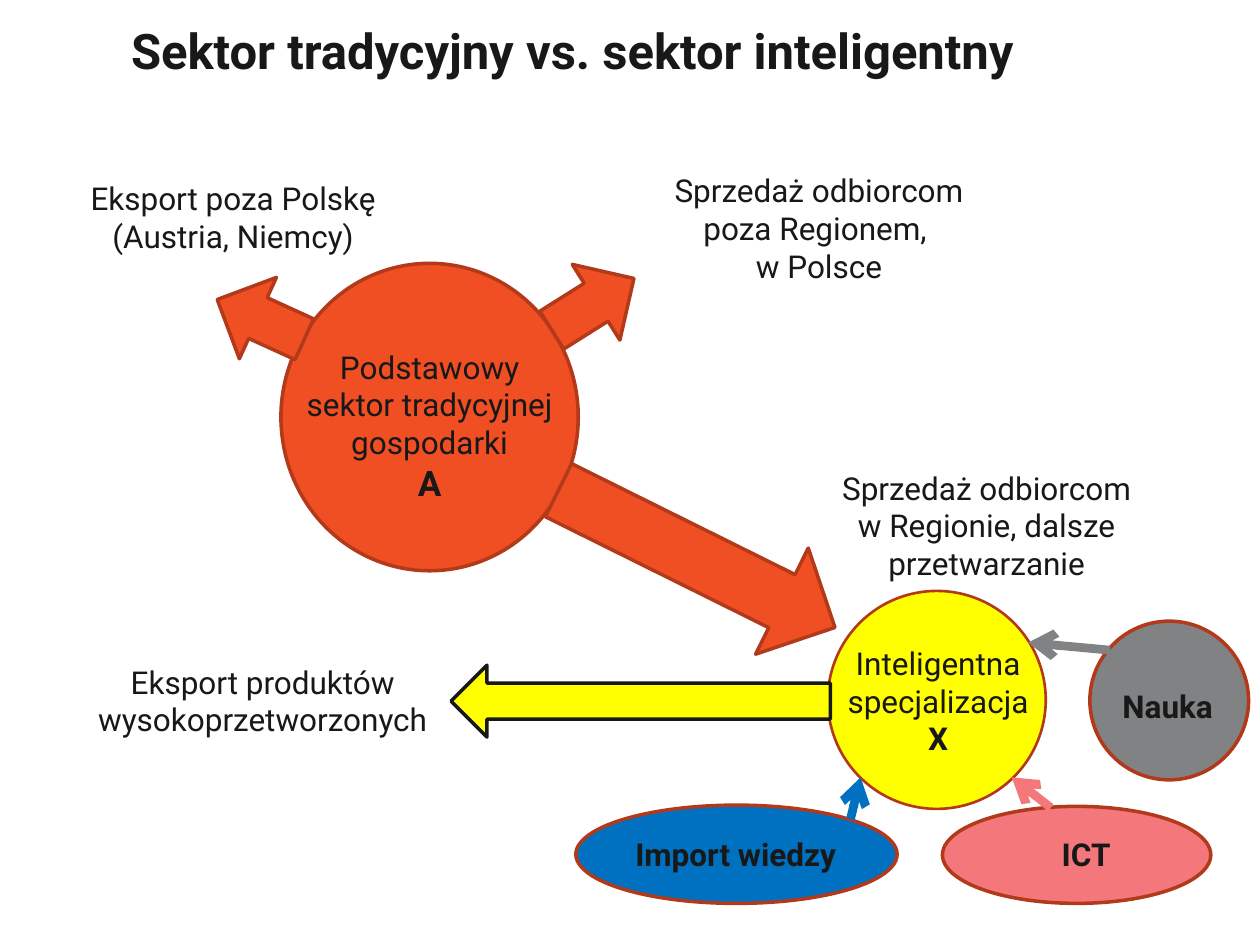
from pptx import Presentation
from pptx.dml.color import RGBColor
from pptx.enum.shapes import MSO_CONNECTOR, MSO_SHAPE
from pptx.enum.text import MSO_ANCHOR, MSO_AUTO_SIZE, PP_ALIGN
from pptx.oxml.ns import qn
from pptx.util import Inches, Pt
from lxml import etree

OVAL = MSO_SHAPE.OVAL
LEFT_ARROW, DOWN_ARROW = MSO_SHAPE.LEFT_ARROW, MSO_SHAPE.DOWN_ARROW
STRAIGHT = MSO_CONNECTOR.STRAIGHT
LEFT, CENTER = PP_ALIGN.LEFT, PP_ALIGN.CENTER
TOP = MSO_ANCHOR.TOP
GROW = MSO_AUTO_SIZE.SHAPE_TO_FIT_TEXT

FONT = "Roboto"
INK = RGBColor(0x18, 0x18, 0x18)
ORANGE = RGBColor(0xF0, 0x4E, 0x23)
RUST = RGBColor(0xB2, 0x3A, 0x1A)
YELLOW = RGBColor(0xFF, 0xFF, 0x00)
GRAY = RGBColor(0x80, 0x82, 0x84)
PINK = RGBColor(0xF4, 0x77, 0x7C)
BLUE = RGBColor(0x00, 0x70, 0xC0)


def add_run(paragraph, text, size=18, bold=False):
    run = paragraph.add_run()
    run.text = text
    run.font.name = FONT
    run.font.size = Pt(size)
    run.font.bold = bold
    run.font.color.rgb = INK


def add_label(shapes, box, *lines, bold=False, align=CENTER):
    """Add one paragraph per line; a (text, size) pair is a bold marker letter."""
    label = shapes.add_textbox(*map(Inches, box))
    frame = label.text_frame
    frame.word_wrap = True
    frame.auto_size = GROW
    for index, line in enumerate(lines):
        paragraph = frame.add_paragraph() if index else frame.paragraphs[0]
        paragraph.alignment = align
        if isinstance(line, tuple):
            add_run(paragraph, *line, bold=True)
        else:
            add_run(paragraph, line, bold=bold)
    return label


def add_figure(shapes, kind, box, fill, line=RUST, width=2, rotation=0):
    figure = shapes.add_shape(kind, *map(Inches, box))
    figure.shadow.inherit = False
    figure.fill.solid()
    figure.fill.fore_color.rgb = fill
    figure.line.color.rgb = line
    figure.line.width = Pt(width)
    figure.rotation = rotation


def add_inflow(shapes, start, end, color):
    arrow = shapes.add_connector(STRAIGHT, *map(Inches, start + end))
    arrow.line.color.rgb = color
    arrow.line.width = Pt(5)
    etree.SubElement(arrow.line._get_or_add_ln(), qn("a:tailEnd"), type="arrow")
    etree.SubElement(arrow._element.spPr, qn("a:effectLst"))


def fill_title(slide, box):
    title = slide.shapes.title
    title.left, title.top, title.width, title.height = map(Inches, box)
    frame = title.text_frame
    frame.vertical_anchor = TOP
    paragraph = frame.paragraphs[0]
    paragraph.alignment = LEFT
    add_run(paragraph, "Sektor tradycyjny vs. sektor inteligentny", 28, True)


def add_traditional_sector(slide, x, y):
    """Place circle A with its three outgoing arrows; x, y is the circle's corner."""
    shapes = slide.shapes.add_group_shape().shapes
    add_figure(shapes, OVAL, (x, y, 2.36, 2.44), ORANGE)
    add_label(shapes, (x, y + 0.62, 2.36, 1.35),
              "Podstawowy sektor tradycyjnej gospodarki", ("A", 20))
    for kind, dx, dy, width, height, rotation in (
            (LEFT_ARROW, -0.54, 0.09, 0.76, 0.71, 24.5),
            (LEFT_ARROW, 2.09, -0.03, 0.77, 0.71, 147.8),
            (DOWN_ARROW, 2.83, 1.12, 0.94, 2.45, 296.4)):
        add_figure(shapes, kind, (x + dx, y + dy, width, height), ORANGE,
                   rotation=rotation)


def add_sales_labels(slide, x, y):
    """Place the three market labels around the traditional sector."""
    width = 2.52
    add_label(slide.shapes, (x + 5.98, y + 2.36, width, 1.01),
              "Sprzedaż odbiorcom w Regionie, dalsze przetwarzanie")
    domestic = add_label(slide.shapes, (x + 4.65, y, width, 1.01),
                         "Sprzedaż odbiorcom poza Regionem, ")
    paragraph = domestic.text_frame.paragraphs[0]
    paragraph.add_line_break()
    add_run(paragraph, "w Polsce")
    add_label(slide.shapes, (x, y + 0.06, width, 0.71),
              "Eksport poza Polskę (Austria, Niemcy)")


def add_smart_sector(slide, x, y):
    """Place circle X, its knowledge sources and its export; x, y is the circle's corner."""
    shapes = slide.shapes
    add_figure(shapes, OVAL, (x, y, 1.73, 1.73), YELLOW, width=1.5)
    add_label(shapes, (x - 0.07, y + 0.37, 1.89, 1.01),
              "Inteligentna specjalizacja", ("X", 18))

    sources = (
        ("Nauka", GRAY, (2.08, 0.24, 1.26, 1.26), (2.24, 0.71, 1.1), LEFT,
         (2.24, 0.47), (1.59, 0.41)),
        ("ICT", PINK, (0.91, 1.71, 2.13, 0.77), (1.5, 1.89, 1.1), CENTER,
         (1.77, 1.72), (1.46, 1.48)),
        ("Import wiedzy", BLUE, (-2, 1.7, 2.55, 0.78), (-1.86, 1.89, 2.26), CENTER,
         (0.18, 1.81), (0.26, 1.48)),
    )
    for name, color, oval, label, align, start, end in sources:
        add_figure(shapes, OVAL, (x + oval[0], y + oval[1], *oval[2:]), color)
        add_label(shapes, (x + label[0], y + label[1], label[2], 0.4), name,
                  bold=True, align=align)
        add_inflow(shapes, (x + start[0], y + start[1]),
                   (x + end[0], y + end[1]), color)

    add_figure(shapes, LEFT_ARROW, (x - 2.99, y + 0.59, 3.01, 0.57), YELLOW, INK)
    add_label(shapes, (x - 5.98, y + 0.52, 2.99, 0.71),
              "Eksport produktów wysokoprzetworzonych")


def main():
    deck = Presentation()
    deck.slide_width, deck.slide_height = Inches(10), Inches(7.5)
    slide = deck.slides.add_slide(deck.slide_layouts[5])
    fill_title(slide, (0.94, 0.11, 9.06, 1.12))
    add_traditional_sector(slide, 2.23, 2.09)
    add_sales_labels(slide, 0.59, 1.31)
    add_smart_sector(slide, 6.57, 4.69)
    deck.save("out.pptx")


if __name__ == "__main__":
    main()
